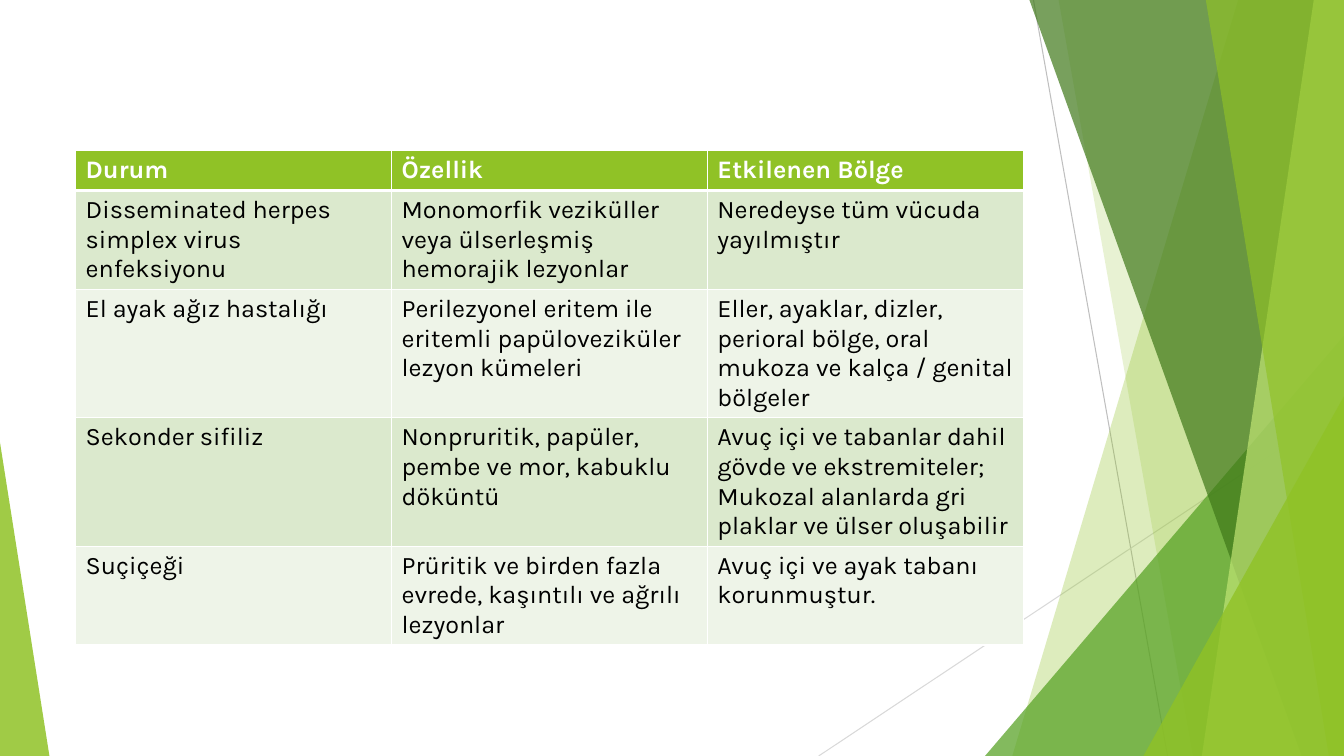
from lxml import etree
from pptx import Presentation
from pptx.dml.color import RGBColor
from pptx.enum.shapes import MSO_CONNECTOR, MSO_SHAPE
from pptx.oxml.ns import qn
from pptx.util import Inches, Pt

STRAIGHT = MSO_CONNECTOR.STRAIGHT
TRIANGLE = MSO_SHAPE.ISOSCELES_TRIANGLE

WIDTH, HEIGHT = 13.33, 7.5
FONT = "Karla"
COLORS = {
    "lime": "90C226", "green": "54A021", "forest": "3F7819", "pale": "C0E474",
    "line_dark": "BFBFBF", "line_light": "D9D9D9",
    "band_dark": "DBE9CD", "band_light": "EEF4E8",
    "white": "FFFFFF", "black": "000000",
}

ROWS = [
    ("Durum", "Özellik", "Etkilenen Bölge"),
    ("Disseminated herpes simplex virus enfeksiyonu",
     "Monomorfik veziküller veya ülserleşmiş hemorajik lezyonlar",
     "Neredeyse tüm vücuda yayılmıştır"),
    ("El ayak ağız hastalığı",
     "Perilezyonel eritem ile eritemli papüloveziküler lezyon kümeleri",
     "Eller, ayaklar, dizler, perioral bölge, oral mukoza ve kalça / genital bölgeler"),
    ("Sekonder sifiliz",
     "Nonpruritik, papüler, pembe ve mor, kabuklu döküntü",
     "Avuç içi ve tabanlar dahil gövde ve ekstremiteler; "
     "Mukozal alanlarda gri plaklar ve ülser oluşabilir"),
    ("Suçiçeği",
     "Prüritik ve birden fazla evrede, kaşıntılı ve ağrılı lezyonlar",
     "Avuç içi ve ayak tabanı korunmuştur."),
]
ROW_HEIGHTS = [0.4, 0.98, 1.27, 1.27, 0.98]
TABLE_LEFT, TABLE_TOP, TABLE_WIDTH = 0.75, 1.49, 9.4

LINES = [
    ((10.25, 0), (11.58, HEIGHT), "line_dark"),
    ((WIDTH, 4.03), (8.12, HEIGHT), "line_light"),
]
FACETS = [
    ("band", (12.28, 10.04), "lime", 30),
    ("band", (10.5, 11.83), "lime", 20),
    ("triangle", (9.77, 3.33, 3.56, 1), "green", 72),
    ("band", (10.21, 12.91), "forest", 70),
    ("band", (13.03, 11.92), "pale", 70),
    ("band", (11.96, 13.18), "lime", 65),
    ("triangle", (11.34, 3.93, 1.99, 1), "lime", 80),
    ("triangle", (0, 4.39, 0.49, 0), "lime", 85),
]


def rgb(name):
    return RGBColor.from_string(COLORS[name])


def add_line(page, start, end, color):
    line = page.shapes.add_connector(STRAIGHT, *map(Inches, start + end))
    line.line.color.rgb = rgb(color)
    line.line.width = Pt(0.75)
    etree.SubElement(line._element.spPr, qn("a:effectLst"))


def add_band(page, top_x, bottom_x):
    builder = page.shapes.build_freeform(Inches(top_x), 0)
    corners = [(WIDTH, 0), (WIDTH, HEIGHT), (bottom_x, HEIGHT)]
    builder.add_line_segments([(Inches(x), Inches(y)) for x, y in corners])
    return builder.convert_to_shape()


def add_triangle(page, left, top, width, apex):
    shape = page.shapes.add_shape(
        TRIANGLE, *map(Inches, (left, top, width, HEIGHT - top)))
    shape.adjustments[0] = apex
    return shape


def paint(shape, color, opacity):
    shape.shadow.inherit = False
    shape.line.fill.background()
    shape.fill.solid()
    shape.fill.fore_color.rgb = rgb(color)
    tint = shape._element.spPr.find(qn("a:solidFill"))[0]
    etree.SubElement(tint, qn("a:alpha"), val=str(opacity * 1000))


def add_borders(cell, header, below_header):
    properties = cell._tc.get_or_add_tcPr()
    for side in ("lnL", "lnR", "lnT", "lnB"):
        thick = (header and side == "lnB") or (below_header and side == "lnT")
        border = etree.SubElement(
            properties, qn(f"a:{side}"), w=str(Pt(3 if thick else 1)))
        fill = etree.SubElement(border, qn("a:solidFill"))
        etree.SubElement(fill, qn("a:srgbClr"), val=COLORS["white"])


def fill_cell(cell, text, row):
    header = row == 0
    add_borders(cell, header, row == 1)
    cell.fill.solid()
    band = "band_dark" if row % 2 else "band_light"
    cell.fill.fore_color.rgb = rgb("lime" if header else band)
    cell.text_frame.text = text
    font = cell.text_frame.paragraphs[0].runs[0].font
    font.name = FONT
    font.size = Pt(18)
    font.bold = header
    font.color.rgb = rgb("white" if header else "black")


def add_conditions(page):
    columns = len(ROWS[0])
    table = page.shapes.add_table(
        len(ROWS), columns, Inches(TABLE_LEFT), Inches(TABLE_TOP),
        Inches(TABLE_WIDTH), Inches(sum(ROW_HEIGHTS))).table
    for column in table.columns:
        column.width = Inches(TABLE_WIDTH / columns)
    for row, (texts, height) in enumerate(zip(ROWS, ROW_HEIGHTS)):
        table.rows[row].height = Inches(height)
        for column, text in enumerate(texts):
            fill_cell(table.cell(row, column), text, row)


def main():
    deck = Presentation()
    deck.slide_width, deck.slide_height = Inches(WIDTH), Inches(HEIGHT)
    page = deck.slides.add_slide(deck.slide_layouts[6])
    for start, end, color in LINES:
        add_line(page, start, end, color)
    makers = {"band": add_band, "triangle": add_triangle}
    for kind, geometry, color, opacity in FACETS:
        paint(makers[kind](page, *geometry), color, opacity)
    add_conditions(page)
    deck.save("out.pptx")


if __name__ == "__main__":
    main()
